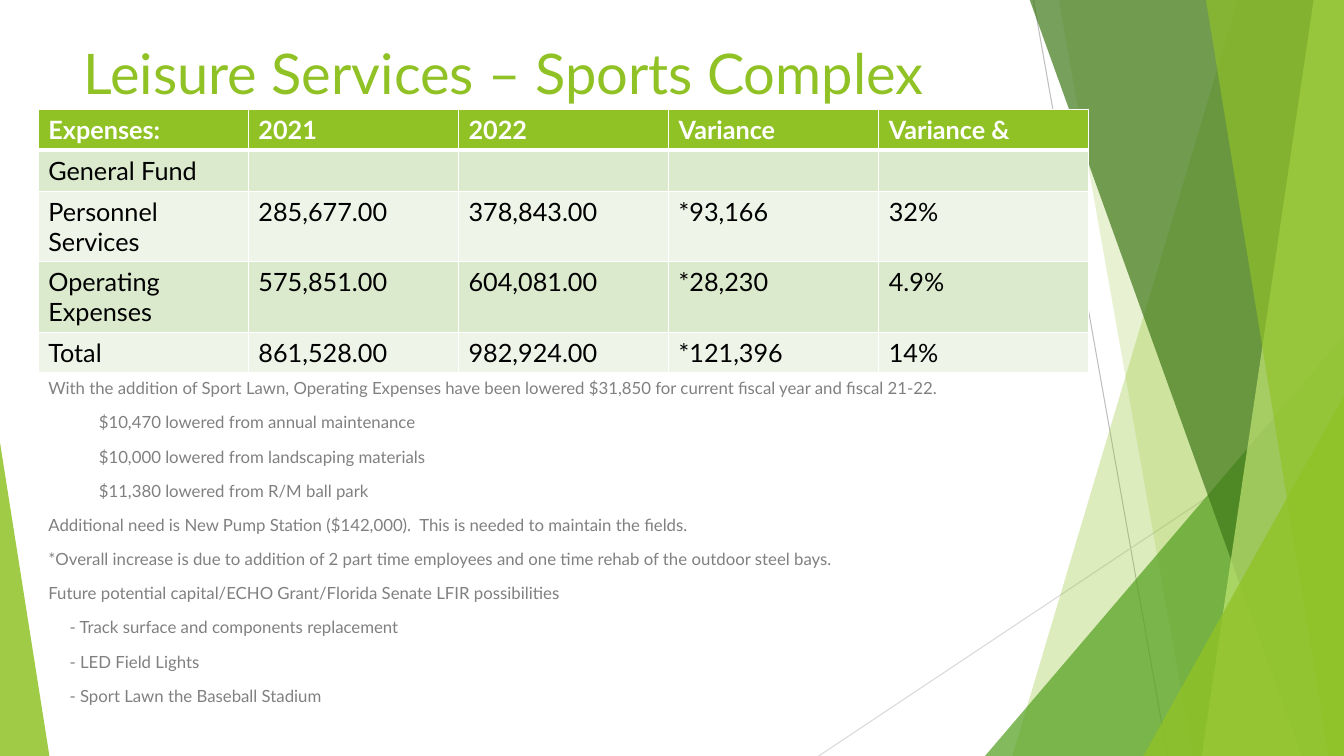
from dataclasses import dataclass
from typing import NamedTuple

from lxml import etree
from pptx import Presentation
from pptx.dml.color import RGBColor
from pptx.enum.shapes import MSO_CONNECTOR, MSO_SHAPE
from pptx.enum.text import MSO_ANCHOR, MSO_AUTO_SIZE, PP_ALIGN
from pptx.oxml.ns import qn
from pptx.util import Emu, Pt

STRAIGHT = MSO_CONNECTOR.STRAIGHT
TRIANGLE = MSO_SHAPE.ISOSCELES_TRIANGLE
LEFT = PP_ALIGN.LEFT
TOP, BOTTOM = MSO_ANCHOR.TOP, MSO_ANCHOR.BOTTOM
NO_AUTOFIT = MSO_AUTO_SIZE.NONE

EMU_PER_PX = 9144  # 100 px to the inch
SLIDE_WIDTH, SLIDE_HEIGHT = 1333, 750
EDGE_TOP = -1


@dataclass(frozen=True)
class Theme:
    font: str = "Lato"
    green: str = "90C226"
    mid_green: str = "54A021"
    dark_green: str = "3F7819"
    pale_green: str = "C0E474"
    band_dark: str = "DBE9CD"
    band_light: str = "EEF4E8"
    white: str = "FFFFFF"
    black: str = "000000"
    gray: str = "808080"
    line_dark: str = "BFBFBF"
    line_light: str = "D9D9D9"
    title_size: int = 40
    table_size: int = 18
    note_size: int = 12


THEME = Theme()


class Box(NamedTuple):
    left: int
    top: int
    width: int
    height: int


class Ray(NamedTuple):
    start: tuple[int, int]
    end: tuple[int, int]
    color: str


class Shard(NamedTuple):
    """Strip along the right slide edge, given by its left corners."""
    top_x: int
    bottom_x: int
    color: str
    opacity: int


class Wedge(NamedTuple):
    box: Box
    apex: float
    color: str
    opacity: int


class Note(NamedTuple):
    text: str
    indent: int = 0


RAYS = (
    Ray((1025, 0), (1158, 750), THEME.line_dark),
    Ray((1333, 403), (812, 750), THEME.line_light),
)
# Back to front
FACETS = (
    Shard(1228, 1004, THEME.green, 30),
    Shard(1050, 1183, THEME.green, 20),
    Wedge(Box(977, 333, 356, 417), 1, THEME.mid_green, 72),
    Shard(1021, 1291, THEME.dark_green, 70),
    Shard(1303, 1192, THEME.pale_green, 70),
    Shard(1196, 1318, THEME.green, 65),
    Wedge(Box(1134, 393, 199, 357), 1, THEME.green, 80),
    Wedge(Box(0, 439, 49, 311), 0, THEME.green, 85),
)
TITLE = "Leisure Services – Sports Complex"
TITLE_BOX = Box(73, 12, 940, 98)
NOTES_BOX = Box(38, 370, 1042, 365)
TAB, DASH = 50, 21
NOTES = (
    Note("With the addition of Sport Lawn, Operating Expenses have been lowered "
         "$31,850 for current fiscal year and fiscal 21-22."),
    Note("$10,470 lowered from annual maintenance", TAB),
    Note("$10,000 lowered from landscaping materials", TAB),
    Note("$11,380 lowered from R/M ball park", TAB),
    Note("Additional need is New Pump Station ($142,000).  This is needed to maintain the fields."),
    Note("*Overall increase is due to addition of 2 part time employees and "
         "one time rehab of the outdoor steel bays."),
    Note("Future potential capital/ECHO Grant/Florida Senate LFIR possibilities"),
    Note("- Track surface and components replacement", DASH),
    Note("- LED Field Lights", DASH),
    Note("- Sport Lawn the Baseball Stadium", DASH),
)
TABLE_BOX = Box(38, 109, 1042, 260)
ROW_HEIGHTS = (40, 40, 70, 70, 40)
EXPENSES = (
    ("Expenses:", "2021", "2022", "Variance", "Variance &"),
    ("General Fund", "", "", "", ""),
    ("Personnel Services", "285,677.00", "378,843.00", "*93,166", "32%"),
    ("Operating Expenses", "575,851.00", "604,081.00", "*28,230", "4.9%"),
    ("Total", "861,528.00", "982,924.00", "*121,396", "14%"),
)


def px(length: int) -> Emu:
    return Emu(length * EMU_PER_PX)


def rgb(color: str) -> RGBColor:
    return RGBColor.from_string(color)


def write_text(paragraph, text: str, *, size: int, color: str, bold: bool = False,
               space_before: int = 0, indent: int = 0) -> None:
    paragraph.alignment = LEFT
    paragraph.space_before = Pt(space_before)
    properties = paragraph._p.get_or_add_pPr()
    properties.set("marL", str(px(indent)))
    properties.set("indent", "0")
    etree.SubElement(properties, qn("a:buNone"))
    run = paragraph.add_run()
    run.text = text
    run.font.name = THEME.font
    run.font.size = Pt(size)
    run.font.bold = bold
    run.font.color.rgb = rgb(color)


def draw_ray(slide, ray: Ray) -> None:
    points = [px(value) for value in (*ray.start, *ray.end)]
    connector = slide.shapes.add_connector(STRAIGHT, *points)
    connector.line.color.rgb = rgb(ray.color)
    connector.line.width = Pt(0.75)
    etree.SubElement(connector.element.spPr, qn("a:effectLst"))


def draw_facet(slide, facet: Shard | Wedge) -> None:
    if isinstance(facet, Wedge):
        shape = slide.shapes.add_shape(TRIANGLE, *map(px, facet.box))
        shape.adjustments[0] = facet.apex
    else:
        builder = slide.shapes.build_freeform(facet.top_x, EDGE_TOP, scale=EMU_PER_PX)
        builder.add_line_segments([(SLIDE_WIDTH, EDGE_TOP), (SLIDE_WIDTH, SLIDE_HEIGHT),
                                   (facet.bottom_x, SLIDE_HEIGHT)], close=True)
        shape = builder.convert_to_shape()
    shape.shadow.inherit = False
    shape.fill.solid()
    shape.fill.fore_color.rgb = rgb(facet.color)
    color = shape.element.spPr.find(f"{qn('a:solidFill')}/{qn('a:srgbClr')}")
    etree.SubElement(color, qn("a:alpha"), val=str(facet.opacity * 1000))
    shape.line.fill.background()


def place_placeholder(placeholder, box: Box, anchor: MSO_ANCHOR):
    """Move a placeholder to its box, in front of the shapes drawn so far."""
    placeholder.left, placeholder.top, placeholder.width, placeholder.height = map(px, box)
    placeholder.element.getparent().append(placeholder.element)
    frame = placeholder.text_frame
    frame.word_wrap = True
    frame.auto_size = NO_AUTOFIT
    frame.vertical_anchor = anchor
    return frame


def set_borders(cell, row: int) -> None:
    widths = {"a:lnL": 1, "a:lnR": 1, "a:lnT": 3 if row == 1 else 1, "a:lnB": 3 if row == 0 else 1}
    properties = cell._tc.get_or_add_tcPr()
    for tag, width in widths.items():
        border = etree.SubElement(properties, qn(tag), w=str(Pt(width)))
        fill = etree.SubElement(border, qn("a:solidFill"))
        etree.SubElement(fill, qn("a:srgbClr"), val=THEME.white)


def draw_table(slide) -> None:
    columns = len(EXPENSES[0])
    table = slide.shapes.add_table(len(EXPENSES), columns, *map(px, TABLE_BOX)).table
    for column in table.columns:
        column.width = px(TABLE_BOX.width) // columns
    for row, values in enumerate(EXPENSES):
        table.rows[row].height = px(ROW_HEIGHTS[row])
        header = row == 0
        band = THEME.band_dark if row % 2 else THEME.band_light
        for column, value in enumerate(values):
            cell = table.cell(row, column)
            set_borders(cell, row)
            cell.fill.solid()
            cell.fill.fore_color.rgb = rgb(THEME.green if header else band)
            if value:
                write_text(cell.text_frame.paragraphs[0], value, size=THEME.table_size,
                           color=THEME.white if header else THEME.black, bold=header)


def main() -> None:
    presentation = Presentation()
    presentation.slide_width, presentation.slide_height = px(SLIDE_WIDTH), px(SLIDE_HEIGHT)
    slide = presentation.slides.add_slide(presentation.slide_layouts[1])

    # Background facets
    for ray in RAYS:
        draw_ray(slide, ray)
    for facet in FACETS:
        draw_facet(slide, facet)

    # Title and notes
    title = place_placeholder(slide.shapes.title, TITLE_BOX, BOTTOM)
    write_text(title.paragraphs[0], TITLE, size=THEME.title_size, color=THEME.green)
    body = place_placeholder(slide.placeholders[1], NOTES_BOX, TOP)
    for index, note in enumerate(NOTES):
        paragraph = body.add_paragraph() if index else body.paragraphs[0]
        write_text(paragraph, note.text, size=THEME.note_size, color=THEME.gray,
                   space_before=10, indent=note.indent)

    # Expense table
    draw_table(slide)
    presentation.save("out.pptx")


if __name__ == "__main__":
    main()
